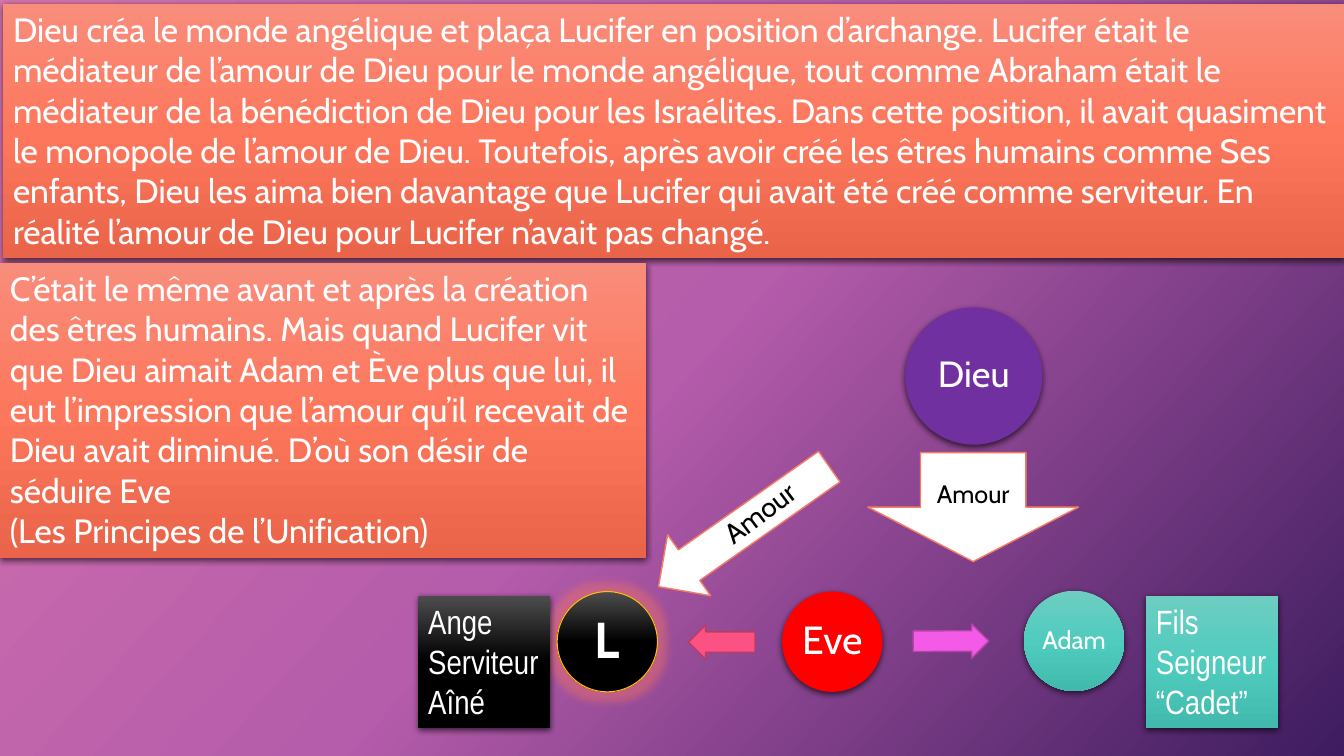
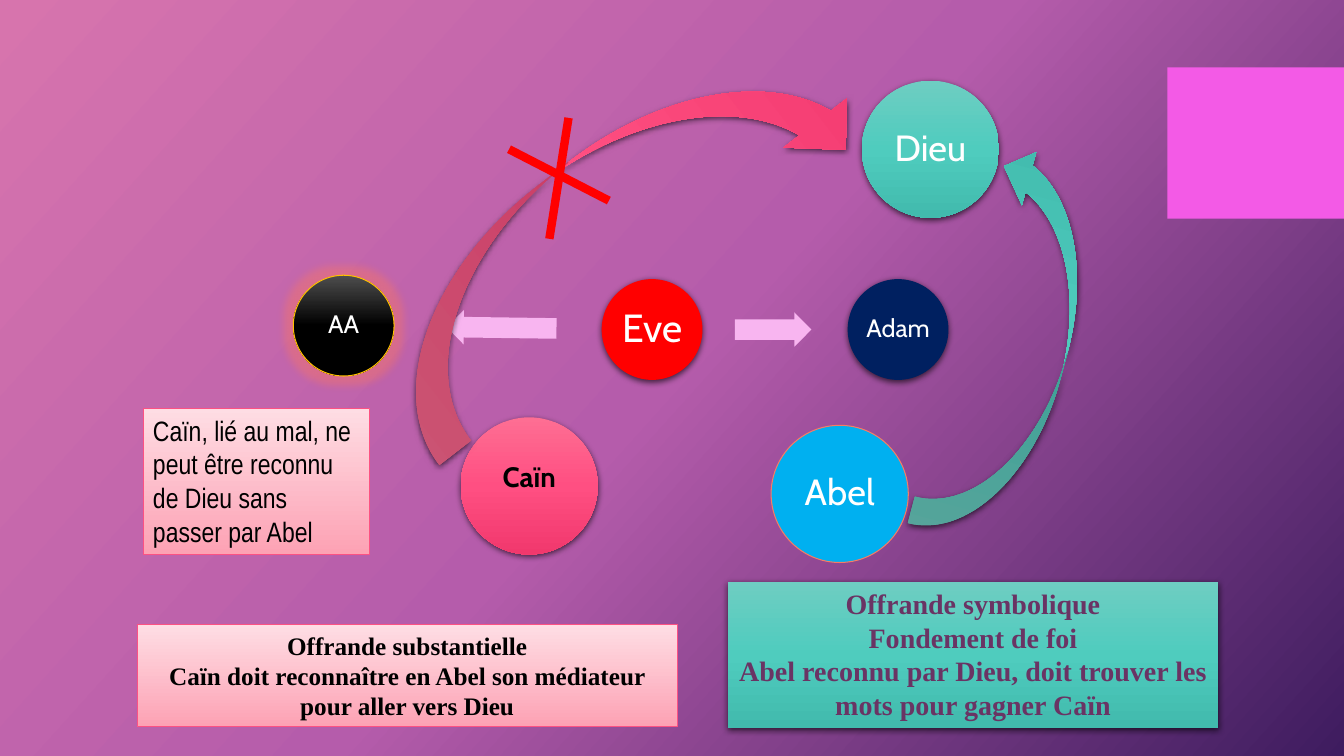
from dataclasses import dataclass

from lxml import etree
from pptx import Presentation
from pptx.dml.color import RGBColor
from pptx.enum.shapes import MSO_CONNECTOR, MSO_SHAPE
from pptx.enum.text import MSO_ANCHOR, PP_ALIGN
from pptx.oxml.ns import qn
from pptx.util import Pt

OVAL, RECT = MSO_SHAPE.OVAL, MSO_SHAPE.RECTANGLE
RIGHT, DOWN = MSO_SHAPE.RIGHT_ARROW, MSO_SHAPE.DOWN_ARROW
CURVED = MSO_SHAPE.CURVED_LEFT_ARROW
STRAIGHT = MSO_CONNECTOR.STRAIGHT
LEFT, CENTER = PP_ALIGN.LEFT, PP_ALIGN.CENTER
TOP, MIDDLE = MSO_ANCHOR.TOP, MSO_ANCHOR.MIDDLE

COLORS = {
    "white": "FFFFFF", "black": "000000", "red": "FF0000", "purple": "7030A0",
    "navy": "002060", "sky": "00B0F0", "magenta": "F35AE6", "magenta edge": "B443AA",
    "orchid": "F8B5F0", "rose": "FC5283", "rose edge": "BA3D61",
    "coral edge": "F67C64", "gold": "FFC000", "plum": "6A3464", "glow": "FD775D",
}
# Gradient stops: (position in percent, colour)
GRADIENTS = {
    "backdrop": ((0, "D774AD"), (50, "B55CAB"), (100, "3E1C5F")),
    "coral": ((0, "F98D7B"), (50, "FD775D"), (100, "EA644A")),
    "teal": ((0, "6ECDC2"), (50, "4FCCBE"), (100, "41BAAD")),
    "night": ((0, "4D4D4D"), (50, "000000"), (100, "000000")),
    "pink": ((0, "FE6E93"), (50, "FF4F82"), (100, "F1386D")),
    "blush": ((0, "FEDDE4"), (100, "FDA2B4")),
}
BODY, NARROW, SERIF = "Cabin", "Arial Narrow", "Times New Roman"
SMALL_DISC, LARGE_DISC = 71.6, 98


@dataclass(frozen=True)
class Look:
    fill: str
    line: str = ""
    line_width: float = 0.75
    effect: str = ""


@dataclass(frozen=True)
class Type:
    size: float
    color: str = "white"
    font: str = BODY
    bold: bool = False
    align: PP_ALIGN = LEFT


@dataclass(frozen=True)
class Disc:
    label: str
    left: float
    top: float
    diameter: float
    look: Look
    type: Type
    lift: float = 0


@dataclass(frozen=True)
class Arrow:
    kind: MSO_SHAPE
    left: float
    top: float
    width: float
    height: float
    look: Look
    rotation: float = 0
    flipped: bool = False


@dataclass(frozen=True)
class Panel:
    left: float
    top: float
    width: float
    height: float
    look: Look
    type: Type
    paragraphs: tuple[str, ...]
    wrap: bool = True


RAISED_CORAL = Look("coral", effect="shadow")
RAISED_TEAL = Look("teal", effect="shadow")
RAISED_NIGHT = Look("night", effect="shadow")
RAISED_PINK = Look("pink", effect="shadow")
RAISED_RED = Look("red", effect="shadow")
GLOWING_NIGHT = Look("night", "gold", effect="glow")
LOVE = Look("white", "coral edge", 1)
BLUSH = Look("blush", "rose")
ORCHID = Look("orchid")

STORY = Type(24)
ROLE = Type(24, font=NARROW)
EVE = Type(28, align=CENTER)
GOD = Type(26, align=CENTER)
NAME = Type(18, align=CENTER)


def rgb(name: str) -> RGBColor:
    return RGBColor.from_string(COLORS[name])


def paint_gradient(fill, element, name: str, angle: float) -> None:
    """Fill with the named stops; the angle runs clockwise."""
    fill.gradient()
    fill.gradient_angle = 360 - angle
    stops = next(element.iter(qn("a:gsLst")))
    for old in list(stops):
        stops.remove(old)
    for position, color in GRADIENTS[name]:
        stop = etree.SubElement(stops, qn("a:gs"), pos=str(position * 1000))
        etree.SubElement(stop, qn("a:srgbClr"), val=color)


def add_effect(shape, effect: str) -> None:
    shape.shadow.inherit = False
    if not effect:
        return
    effects = shape._element.spPr.find(qn("a:effectLst"))
    if effect == "shadow":
        node = etree.SubElement(effects, qn("a:outerShdw"), blurRad=str(Pt(4.5)),
                                dist=str(Pt(1.5)), dir="5400000", rotWithShape="0")
        color, alpha = "black", "63000"
    else:
        node = etree.SubElement(effects, qn("a:glow"), rad=str(Pt(12)))
        color, alpha = "glow", "40000"
    tint = etree.SubElement(node, qn("a:srgbClr"), val=COLORS[color])
    etree.SubElement(tint, qn("a:alpha"), val=alpha)


def draw_shape(slide, kind: MSO_SHAPE, left: float, top: float,
               width: float, height: float, look: Look):
    shape = slide.shapes.add_shape(kind, Pt(left), Pt(top), Pt(width), Pt(height))
    if look.fill in GRADIENTS:
        paint_gradient(shape.fill, shape._element, look.fill, 90)
    else:
        shape.fill.solid()
        shape.fill.fore_color.rgb = rgb(look.fill)
    if look.line:
        shape.line.color.rgb = rgb(look.line)
        shape.line.width = Pt(look.line_width)
    else:
        shape.line.fill.background()
    add_effect(shape, look.effect)
    return shape


def write(shape, paragraphs: tuple[str, ...], style: Type,
          anchor: MSO_ANCHOR = TOP, wrap: bool = True) -> None:
    frame = shape.text_frame
    frame.word_wrap = wrap
    frame.vertical_anchor = anchor
    for index, text in enumerate(paragraphs):
        paragraph = frame.add_paragraph() if index else frame.paragraphs[0]
        paragraph.alignment = style.align
        run = paragraph.add_run()
        run.text = text
        run.font.name = style.font
        run.font.size = Pt(style.size)
        run.font.bold = style.bold
        run.font.color.rgb = rgb(style.color)


def draw_disc(slide, disc: Disc) -> None:
    shape = draw_shape(slide, OVAL, disc.left, disc.top,
                       disc.diameter, disc.diameter, disc.look)
    write(shape, (disc.label,), disc.type, MIDDLE, wrap=False)
    frame = shape.text_frame
    frame.margin_left = frame.margin_right = frame.margin_top = Pt(3)
    frame.margin_bottom = Pt(3 + 2 * disc.lift)
    frame.paragraphs[0].line_spacing = 0.9


def draw_arrow(slide, arrow: Arrow):
    shape = draw_shape(slide, arrow.kind, arrow.left, arrow.top,
                       arrow.width, arrow.height, arrow.look)
    shape.rotation = arrow.rotation
    if arrow.kind == RIGHT:
        shape.adjustments[0] = 0.6
    if arrow.flipped:
        shape._element.spPr.find(qn("a:xfrm")).set("flipV", "1")
    return shape


def draw_panel(slide, panel: Panel) -> None:
    shape = draw_shape(slide, RECT, panel.left, panel.top,
                       panel.width, panel.height, panel.look)
    write(shape, panel.paragraphs, panel.type, wrap=panel.wrap)


def draw_stroke(slide, x1: float, y1: float, x2: float, y2: float) -> None:
    stroke = slide.shapes.add_connector(STRAIGHT, Pt(x1), Pt(y1), Pt(x2), Pt(y2))
    stroke.line.color.rgb = rgb("red")
    stroke.line.width = Pt(6)
    etree.SubElement(stroke._element.spPr, qn("a:effectLst"))


def draw_all(slide, items: tuple) -> None:
    painters = {Disc: draw_disc, Arrow: draw_arrow, Panel: draw_panel}
    for item in items:
        painters[type(item)](slide, item)


def new_slide(deck):
    slide = deck.slides.add_slide(deck.slide_layouts[6])
    paint_gradient(slide.background.fill, slide._element, "backdrop", 42)
    return slide


def build_lucifer(deck) -> None:
    slide = new_slide(deck)
    # Family row, story and roles
    draw_all(slide, (
        Disc("Eve", 558.7, 422.6, SMALL_DISC, RAISED_RED, EVE),
        Arrow(RIGHT, 491.8, 446.4, 47.5, 24.5, Look("rose", "rose edge", 1), 180),
        Disc("L", 398, 422.6, SMALL_DISC, GLOWING_NIGHT,
             Type(36, bold=True, align=CENTER)),
        Arrow(RIGHT, 652.3, 445.7, 54, 24.5, Look("magenta", "magenta edge", 1), 359.8),
        Disc("Adam", 731.5, 422, SMALL_DISC, RAISED_TEAL, NAME),
        Panel(2.2, 2.9, 957.8, 181.4, RAISED_CORAL, STORY, (
            "Dieu créa le monde angélique et plaça Lucifer en position d’archange. "
            "Lucifer était le médiateur de l’amour de Dieu pour le monde angélique, "
            "tout comme Abraham était le médiateur de la bénédiction de Dieu pour les "
            "Israélites. Dans cette position, il avait quasiment le monopole de l’amour "
            "de Dieu. Toutefois, après avoir créé les êtres humains comme Ses enfants, "
            "Dieu les aima bien davantage que Lucifer qui avait été créé comme "
            "serviteur. En réalité l’amour de Dieu pour Lucifer n’avait pas changé.",)),
        Disc("Dieu", 646.6, 219.6, LARGE_DISC, Look("purple", effect="shadow"), GOD),
        Panel(818.6, 425.5, 94.3, 94.3, RAISED_TEAL, ROLE,
              ("Fils", "Seigneur", "“Cadet”"), wrap=False),
        Panel(298.8, 425.5, 94.3, 94.3, RAISED_NIGHT, ROLE,
              ("Ange", "Serviteur", "Aîné"), wrap=False),
        Panel(0, 187.9, 461.5, 211, RAISED_CORAL, STORY, (
            "C’était le même avant et après la création des êtres humains. Mais quand "
            "Lucifer vit que Dieu aimait Adam et Ève plus que lui, il eut l’impression "
            "que l’amour qu’il recevait de Dieu avait diminué. D’où son désir de "
            "séduire Eve",
            "(Les Principes de l’Unification)")),
    ))
    # Love given to Adam and to Lucifer
    love_adam = draw_arrow(slide, Arrow(DOWN, 619.9, 323.3, 150.5, 77.8, LOVE))
    write(love_adam, ("Amour",), Type(18, "black", align=CENTER), MIDDLE)
    draw_arrow(slide, Arrow(DOWN, 504.7, 301.7, 53.3, 149, LOVE, 54.9))
    love_lucifer = slide.shapes.add_textbox(Pt(506.2), Pt(350.6), Pt(72.7), Pt(31.7))
    love_lucifer.rotation = 323
    write(love_lucifer, ("Amour",), Type(20, "black", align=CENTER), wrap=False)


def build_offerings(deck) -> None:
    slide = new_slide(deck)
    draw_shape(slide, RECT, 833.8, 48.2, 126.2, 108, Look("magenta"))
    # Family circle
    draw_all(slide, (
        Disc("Eve", 429.8, 199.4, 72, RAISED_RED, EVE),
        Arrow(RIGHT, 319, 221.8, 78.5, 24.5, ORCHID, 180.8),
        Disc("AA", 209.5, 196.6, 72, GLOWING_NIGHT, NAME),
        Arrow(RIGHT, 524.9, 223.2, 54.7, 24.5, ORCHID, 359.9),
        Disc("Adam", 605.5, 199.4, 72, Look("navy", effect="shadow"), NAME),
        Disc("Dieu", 615.6, 57.6, LARGE_DISC, RAISED_TEAL, GOD),
        Disc("Caïn", 329, 298.1, LARGE_DISC, RAISED_PINK,
             Type(20, "black", bold=True, align=CENTER), lift=5.5),
        Disc("Abel", 550.8, 303.8, LARGE_DISC, Look("sky", "coral edge"), GOD),
        Arrow(CURVED, 684, 105.1, 78.5, 283.7, RAISED_TEAL, 15.1, flipped=True),
        Arrow(CURVED, 378, -32.4, 114.5, 396, RAISED_PINK, 232.2),
    ))
    # Cross over Cain's direct way
    draw_stroke(slide, 363.6, 106.6, 434.9, 143.3)
    draw_stroke(slide, 406.1, 84.2, 392.4, 170.6)
    # Explanations
    draw_all(slide, (
        Panel(97.9, 446.4, 385.9, 72.7, BLUSH, Type(18, "black", SERIF, True, CENTER), (
            "Offrande substantielle",
            "Caïn doit reconnaître en Abel son médiateur pour aller vers Dieu")),
        Panel(519.8, 415.4, 350.6, 104.4, RAISED_TEAL,
              Type(20, "plum", SERIF, True, CENTER), (
                  "Offrande symbolique",
                  "Fondement de foi",
                  "Abel reconnu par Dieu, doit trouver les mots pour gagner Caïn")),
        Panel(102.2, 291.6, 162, 104.4, BLUSH, Type(20, "black", NARROW), (
            "Caïn, lié au mal, ne peut être reconnu de Dieu sans passer par Abel",)),
    ))


def main() -> None:
    deck = Presentation()
    deck.slide_width, deck.slide_height = Pt(960), Pt(540)
    build_lucifer(deck)
    build_offerings(deck)
    deck.save("out.pptx")


if __name__ == "__main__":
    main()
